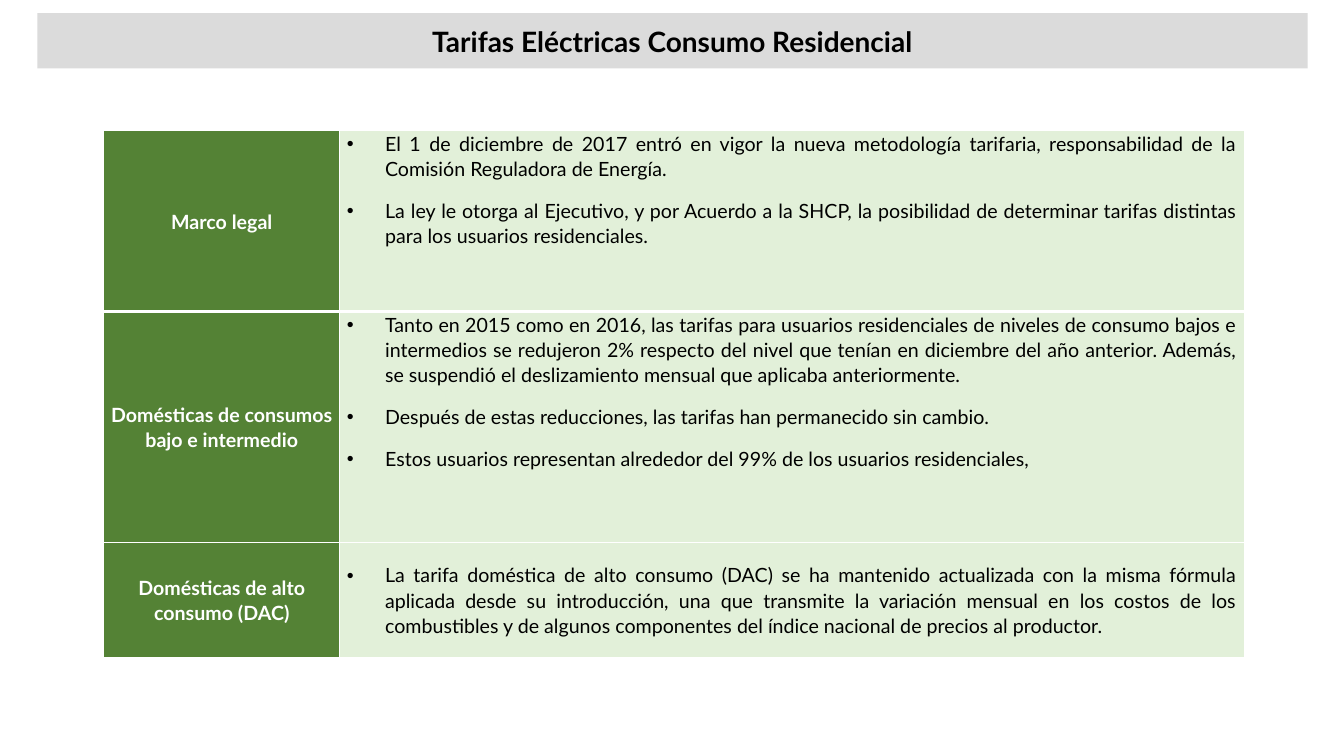
from dataclasses import dataclass

from lxml.etree import SubElement
from pptx import Presentation
from pptx.dml.color import RGBColor
from pptx.enum.text import MSO_ANCHOR as Anchor, PP_ALIGN as Align
from pptx.oxml.ns import qn
from pptx.util import Inches, Pt


@dataclass(frozen=True)
class Theme:
    """Colours, font and type sizes of the slide."""
    font: str = "Lato"
    title_size: int = 20
    body_size: int = 14
    text: str = "000000"
    light: str = "FFFFFF"
    title_bar: str = "DBDBDB"
    label_fill: str = "548235"
    detail_fill: str = "E2F0D9"


class SlideBuilder:
    """Draws styled elements on the current slide."""

    def __init__(self, theme, slide):
        self.theme = theme
        self.slide = slide

    def fill(self, target, colour):
        target.fill.solid()
        target.fill.fore_color.rgb = RGBColor.from_string(colour)

    def run(self, paragraph, text, size, colour, bold):
        run = paragraph.add_run()
        run.text = text
        run.font.name = self.theme.font
        run.font.size = Pt(size)
        run.font.bold = bold
        run.font.color.rgb = RGBColor.from_string(colour)

    def title(self, text, left, top, width, height):
        title = self.slide.shapes.title
        title.left, title.top = Inches(left), Inches(top)
        title.width, title.height = Inches(width), Inches(height)
        self.fill(title, self.theme.title_bar)
        title.text_frame.vertical_anchor = Anchor.MIDDLE
        paragraph = title.text_frame.paragraphs[0]
        paragraph.alignment = Align.CENTER
        self.run(paragraph, text, self.theme.title_size, self.theme.text, True)

    def borders(self, cell, widths):
        properties = cell._tc.get_or_add_tcPr()
        for side, width in zip("LRTB", widths):
            line = SubElement(properties, qn(f"a:ln{side}"), w=str(Pt(width)))
            solid = SubElement(line, qn("a:solidFill"))
            SubElement(solid, qn("a:srgbClr"), val=self.theme.light)

    def bullet(self, paragraph):
        paragraph.space_before = paragraph.space_after = Pt(6)
        properties = paragraph._p.get_or_add_pPr()
        properties.set("marL", str(Inches(0.38)))
        properties.set("indent", str(Inches(-0.38)))
        SubElement(properties, qn("a:buFont"), typeface="Arial")
        SubElement(properties, qn("a:buChar"), char="•")

    def cell(self, cell, texts, anchor, widths, is_label):
        theme = self.theme
        self.borders(cell, widths)
        self.fill(cell, theme.label_fill if is_label else theme.detail_fill)
        cell.margin_left = cell.margin_right = Inches(0.07)
        cell.margin_top = cell.margin_bottom = 0
        cell.vertical_anchor = anchor
        frame = cell.text_frame
        for index, text in enumerate(texts):
            paragraph = frame.add_paragraph() if index else frame.paragraphs[0]
            paragraph.alignment = Align.CENTER if is_label else Align.JUSTIFY
            paragraph.line_spacing = 1.07
            if not is_label:
                self.bullet(paragraph)
            colour = theme.light if is_label else theme.text
            self.run(paragraph, text, theme.body_size, colour, is_label)

    def table(self, rows, left, top, column_widths, row_heights):
        table = self.slide.shapes.add_table(
            len(rows), len(column_widths), Inches(left), Inches(top),
            Inches(sum(column_widths)), Inches(sum(row_heights))).table
        table.first_row = table.horz_banding = False
        for column, width in zip(table.columns, column_widths):
            column.width = Inches(width)
        for index, (label, details, anchor) in enumerate(rows):
            table.rows[index].height = Inches(row_heights[index])
            widths = (1, 1, 3 if index == 1 else 1, 3 if index == 0 else 1)
            self.cell(table.cell(index, 0), [label], Anchor.MIDDLE, widths, True)
            self.cell(table.cell(index, 1), details, anchor, widths, False)


TARIFFS = [
    ("Marco legal", [
        "El 1 de diciembre de 2017 entró en vigor la nueva metodología tarifaria, "
        "responsabilidad de la Comisión Reguladora de Energía.",
        "La ley le otorga al Ejecutivo, y por Acuerdo a la SHCP, la posibilidad de "
        "determinar tarifas distintas para los usuarios residenciales.",
    ], Anchor.TOP),
    ("Domésticas de consumos bajo e intermedio", [
        "Tanto en 2015 como en 2016, las tarifas para usuarios residenciales de niveles "
        "de consumo bajos e intermedios se redujeron 2% respecto del nivel que tenían en "
        "diciembre del año anterior. Además, se suspendió el deslizamiento mensual que "
        "aplicaba anteriormente.",
        "Después de estas reducciones, las tarifas han permanecido sin cambio.",
        "Estos usuarios representan alrededor del 99% de los usuarios residenciales,",
    ], Anchor.TOP),
    ("Domésticas de alto consumo (DAC)", [
        "La tarifa doméstica de alto consumo (DAC) se ha mantenido actualizada con la "
        "misma fórmula aplicada desde su introducción, una que transmite la variación "
        "mensual en los costos de los combustibles y de algunos componentes del índice "
        "nacional de precios al productor.",
    ], Anchor.MIDDLE),
]


def main():
    presentation = Presentation()
    presentation.slide_width, presentation.slide_height = Inches(13.33), Inches(7.5)
    slide = presentation.slides.add_slide(presentation.slide_layouts[5])
    builder = SlideBuilder(Theme(), slide)
    builder.title("Tarifas Eléctricas Consumo Residencial", 0.37, 0.13, 12.6, 0.55)
    builder.table(TARIFFS, 1.03, 1.29, (2.34, 8.97), (1.8, 2.29, 1.14))
    presentation.save("out.pptx")


if __name__ == "__main__":
    main()
